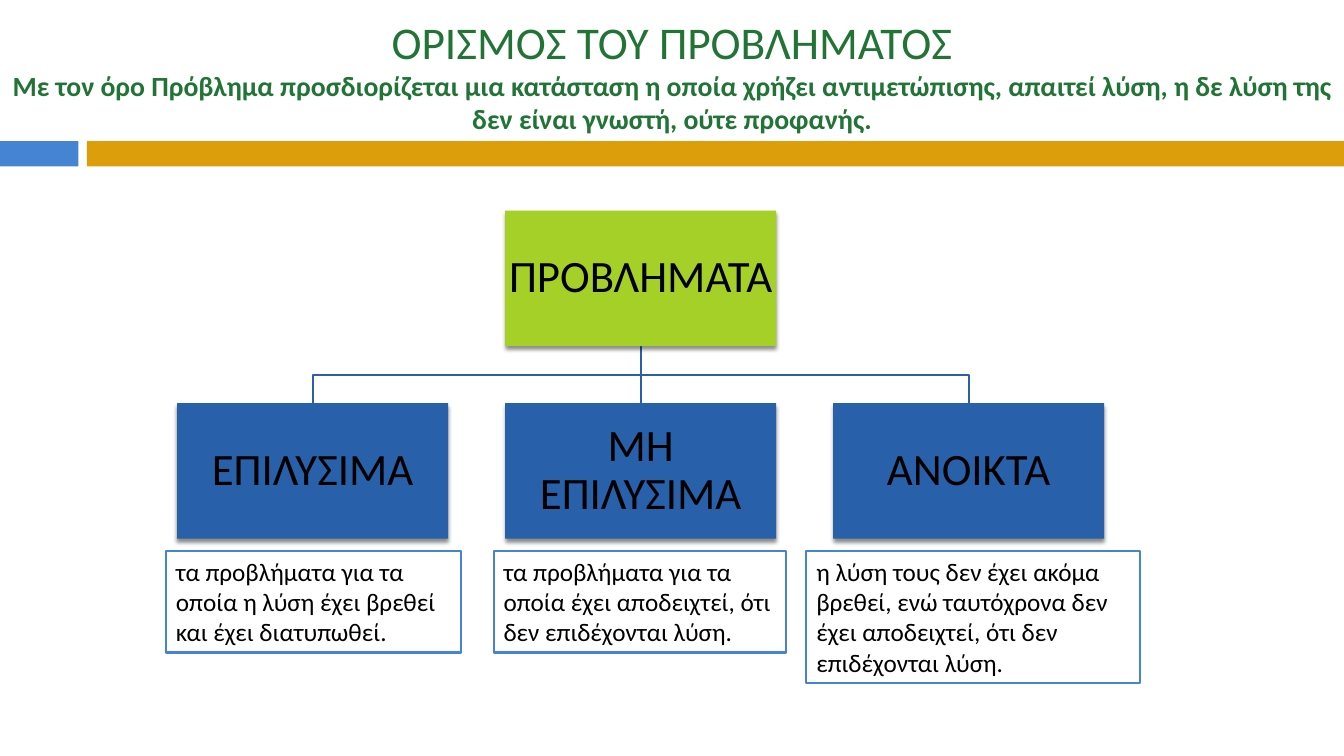
from dataclasses import dataclass

from lxml.etree import SubElement
from pptx import Presentation
from pptx.dml.color import RGBColor
from pptx.enum.shapes import MSO_CONNECTOR, MSO_SHAPE
from pptx.enum.text import MSO_ANCHOR, PP_ALIGN
from pptx.oxml.ns import qn
from pptx.util import Pt


@dataclass(frozen=True)
class Theme:
    font: str = "Calibri"
    heading: str = "217436"
    text: str = "000000"
    paper: str = "FFFFFF"
    accent: str = "4584D3"
    band: str = "DC9F0B"
    root: str = "A5D028"
    branch: str = "2861A9"
    heading_size: float = 32.4
    definition_size: float = 19.8
    node_size: float = 32
    note_size: float = 18
    line_width: float = 1.5


def write(frame, *lines, color, align=PP_ALIGN.LEFT, anchor=MSO_ANCHOR.MIDDLE,
          spacing=1.0, inset=(7.2, 3.6)):
    """Fill a text frame with (text, size, bold) lines, one paragraph each."""
    frame.word_wrap = True
    frame.vertical_anchor = anchor
    frame.margin_left = frame.margin_right = Pt(inset[0])
    frame.margin_top = frame.margin_bottom = Pt(inset[1])
    for index, (text, size, bold) in enumerate(lines):
        paragraph = frame.add_paragraph() if index else frame.paragraphs[0]
        paragraph.alignment = align
        paragraph.line_spacing = spacing
        run = paragraph.add_run()
        run.text = text
        run.font.name = Theme.font
        run.font.size = Pt(size)
        run.font.bold = bold
        run.font.color.rgb = RGBColor.from_string(color)


class ProblemSlide:
    def __init__(self, slide, theme):
        self.shapes = slide.shapes
        self.theme = theme

    def heading(self, title, definition):
        box = self.shapes.add_textbox(Pt(0), Pt(10), Pt(960), Pt(88))
        write(box.text_frame, (title, self.theme.heading_size, False),
              (definition, self.theme.definition_size, True),
              color=self.theme.heading, align=PP_ALIGN.CENTER,
              anchor=MSO_ANCHOR.TOP, inset=(7.2, 0))

    def block(self, left, top, width, height, fill, outline=None):
        block = self.shapes.add_shape(
            MSO_SHAPE.RECTANGLE, Pt(left), Pt(top), Pt(width), Pt(height))
        block.fill.solid()
        block.fill.fore_color.rgb = RGBColor.from_string(fill)
        if outline:
            self.stroke(block.line, outline)
        else:
            block.line.fill.background()
        block.shadow.inherit = False
        return block

    def node(self, label, left, top, width, height, fill):
        node = self.block(left, top, width, height, fill)
        self.drop_shadow(node)
        write(node.text_frame, (label, self.theme.node_size, False),
              color=self.theme.text, align=PP_ALIGN.CENTER, spacing=0.9,
              inset=(1.6, 1.6))

    def note(self, text, left, top, width, height):
        note = self.block(left, top, width, height, self.theme.paper, self.theme.accent)
        write(note.text_frame, (text, self.theme.note_size, False), color=self.theme.text)

    def link(self, start, end):
        """Join two points, with a bend halfway down when they are not in line."""
        (x1, y1), (x2, y2) = start, end
        if x1 == x2:
            link = self.shapes.add_connector(
                MSO_CONNECTOR.STRAIGHT, Pt(x1), Pt(y1), Pt(x2), Pt(y2))
            SubElement(link._element.spPr, qn("a:effectLst"))
        else:
            bend = (y1 + y2) / 2
            outline = self.shapes.build_freeform(Pt(x1), Pt(y1))
            outline.add_line_segments(
                [(Pt(x), Pt(y)) for x, y in ((x1, bend), (x2, bend), (x2, y2))],
                close=False)
            link = outline.convert_to_shape()
            link.fill.background()
            link.shadow.inherit = False
        self.stroke(link.line, self.theme.branch)

    def stroke(self, line, color):
        line.color.rgb = RGBColor.from_string(color)
        line.width = Pt(self.theme.line_width)

    def drop_shadow(self, shape):
        effects = shape._element.spPr.find(qn("a:effectLst"))
        shadow = SubElement(effects, qn("a:outerShdw"), blurRad=str(Pt(3)),
                            dist=str(Pt(2.4)), dir="5400000", rotWithShape="0")
        color = SubElement(shadow, qn("a:srgbClr"), val=self.theme.text)
        SubElement(color, qn("a:alpha"), val="45000")


NODE_WIDTH, NODE_HEIGHT = 193.6, 96.8
FIRST_LEFT, PITCH = 126.6, 234.3
ROOT_TOP, BRANCH_TOP, NOTE_TOP = 150.4, 288, 393.4

# label, explanation, and the left, width and height of its note
BRANCHES = [
    ("ΕΠΙΛΥΣΙΜΑ",
     "τα προβλήματα για τα οποία η λύση έχει βρεθεί και έχει διατυπωθεί.",
     118.6, 211, 72.7),
    ("ΜΗ ΕΠΙΛΥΣΙΜΑ",
     "τα προβλήματα για τα οποία έχει αποδειχτεί, ότι δεν επιδέχονται λύση.",
     352.6, 209.2, 72.7),
    ("ΑΝΟΙΚΤΑ",
     "η λύση τους δεν έχει ακόμα βρεθεί, ενώ ταυτόχρονα δεν έχει αποδειχτεί, "
     "ότι δεν επιδέχονται λύση.",
     576, 238.3, 94.4),
]


def main():
    presentation = Presentation()
    presentation.slide_width, presentation.slide_height = Pt(960), Pt(540)
    theme = Theme()
    page = ProblemSlide(
        presentation.slides.add_slide(presentation.slide_layouts[6]), theme)

    page.block(0, 100.8, 56, 18, theme.accent)
    page.block(62, 100.8, 898, 18, theme.band)
    page.heading(
        "ΟΡΙΣΜΟΣ ΤΟΥ ΠΡΟΒΛΗΜΑΤΟΣ",
        "Με τον όρο Πρόβλημα προσδιορίζεται μια κατάσταση η οποία χρήζει "
        "αντιμετώπισης, απαιτεί λύση, η δε λύση της δεν είναι γνωστή, ούτε προφανής.")

    lefts = [FIRST_LEFT + PITCH * column for column in range(len(BRANCHES))]
    root_left = lefts[1]
    root_foot = (root_left + NODE_WIDTH / 2, ROOT_TOP + NODE_HEIGHT)
    for left in lefts:
        page.link(root_foot, (left + NODE_WIDTH / 2, BRANCH_TOP))
    page.node("ΠΡΟΒΛΗΜΑΤΑ", root_left, ROOT_TOP, NODE_WIDTH, NODE_HEIGHT, theme.root)
    for left, (label, explanation, note_left, note_width, note_height) in zip(lefts, BRANCHES):
        page.node(label, left, BRANCH_TOP, NODE_WIDTH, NODE_HEIGHT, theme.branch)
        page.note(explanation, note_left, NOTE_TOP, note_width, note_height)

    presentation.save("out.pptx")


if __name__ == "__main__":
    main()
